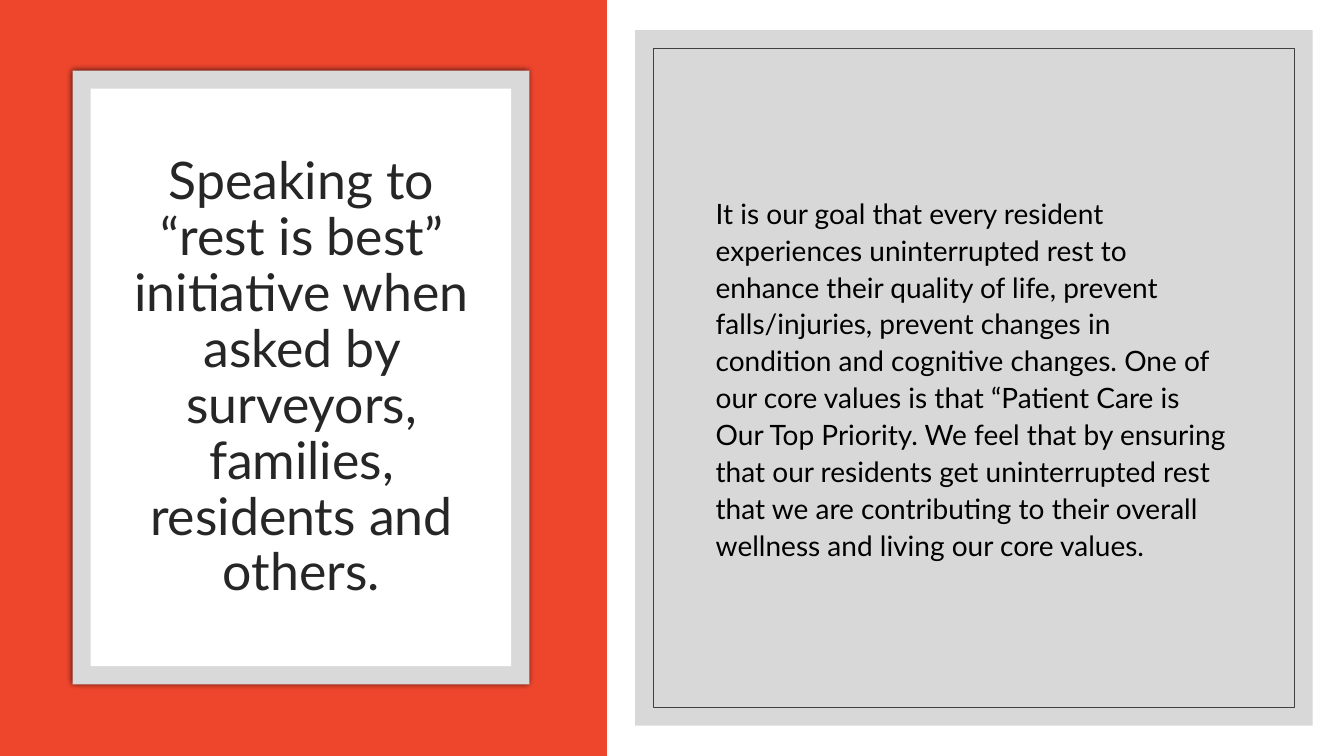
from dataclasses import dataclass
from lxml.etree import SubElement
from pptx import Presentation
from pptx.dml.color import RGBColor
from pptx.enum.shapes import MSO_SHAPE as Shape
from pptx.enum.text import MSO_ANCHOR as Anchor, MSO_AUTO_SIZE as Fit, PP_ALIGN as Align
from pptx.oxml.ns import qn
from pptx.util import Inches, Pt


@dataclass(frozen=True)
class Theme:
    font: str = "Lato"
    white: str = "FFFFFF"
    red: str = "EE462D"
    frame: str = "D9D9D9"
    panel: str = "BFBFBF"
    rule: str = "404040"
    head: str = "262626"
    body: str = "000000"
    shade: str = "000000"
    head_size: int = 37
    body_size: int = 20


THEME = Theme()
TITLE = ("Speaking to “rest is best” initiative when asked by surveyors, "
         "families, residents and others.")
BODY = ("It is our goal that every resident experiences uninterrupted rest to "
        "enhance their quality of life, prevent falls/injuries, prevent changes "
        "in condition and cognitive changes. One of our core values is that "
        "“Patient Care is Our Top Priority. We feel that by ensuring that our "
        "residents get uninterrupted rest that we are contributing to their "
        "overall wellness and living our core values.")


def inset(box, gap):
    left, top, width, height = box
    return left + gap, top + gap, width - 2 * gap, height - 2 * gap


def add_box(slide, box, fill=None, line=None):
    shape = slide.shapes.add_shape(Shape.RECTANGLE, *map(Inches, box))
    shape.shadow.inherit = False
    if fill:
        shape.fill.solid()
        shape.fill.fore_color.rgb = RGBColor.from_string(fill)
    else:
        shape.fill.background()
    if line:
        shape.line.color.rgb = RGBColor.from_string(line)
        shape.line.width = Pt(0.5)
    else:
        shape.line.fill.background()
    return shape


def set_alpha(color, percent):
    SubElement(color, qn("a:alpha"), val=str(percent * 1000))


def add_glow(shape, color, percent, blur):
    effects = shape.element.spPr.find(qn("a:effectLst"))
    outer = SubElement(effects, qn("a:outerShdw"), blurRad=str(Pt(blur)),
                       dist="0", dir="0", algn="ctr", rotWithShape="0")
    set_alpha(SubElement(outer, qn("a:srgbClr"), val=color), percent)


def write(shape, text, *, size, color, align=Align.LEFT, lead=1.0, before=0):
    frame = shape.text_frame
    frame.word_wrap = True
    frame.auto_size = Fit.NONE
    frame.vertical_anchor = Anchor.MIDDLE
    para = frame.paragraphs[0]
    para.alignment = align
    para.line_spacing = lead
    para.space_before = Pt(before)
    run = para.add_run()
    run.text = text
    run.font.name = THEME.font
    run.font.size = Pt(size)
    run.font.color.rgb = RGBColor.from_string(color)


def add_title(slide):
    title = slide.shapes.title
    title.left, title.top, title.width, title.height = map(
        Inches, (1.08, 1.3, 3.82, 4.91))
    title.element.getparent().append(title.element)
    write(title, TITLE, size=THEME.head_size, color=THEME.head,
          align=Align.CENTER, lead=0.9)


def add_card(slide):
    card = (0.72, 0.7, 4.53, 6.09)
    frame = add_box(slide, card, fill=THEME.frame)
    add_glow(frame, THEME.shade, 66, 4)
    add_box(slide, inset(card, 0.18), fill=THEME.white)
    add_title(slide)


def add_panel(slide):
    panel = (6.3, 0.3, 6.72, 6.9)
    back = add_box(slide, panel, fill=THEME.panel)
    set_alpha(back.element.spPr.find(qn("a:solidFill"))[0], 60)
    add_box(slide, inset(panel, 0.18), line=THEME.rule)
    body = slide.shapes.add_textbox(*map(Inches, (7, 1.02, 5.33, 5.45)))
    write(body, BODY, size=THEME.body_size, color=THEME.body, lead=1.1, before=9)


def main():
    deck = Presentation()
    deck.slide_width, deck.slide_height = Inches(13.33), Inches(7.5)
    slide = deck.slides.add_slide(deck.slide_layouts.get_by_name("Title Only"))
    add_box(slide, (0, 0, 13.33, 7.5), fill=THEME.white)
    add_box(slide, (-0.01, 0, 6.03, 7.5), fill=THEME.red)
    add_card(slide)
    add_panel(slide)
    deck.save("out.pptx")


if __name__ == "__main__":
    main()
